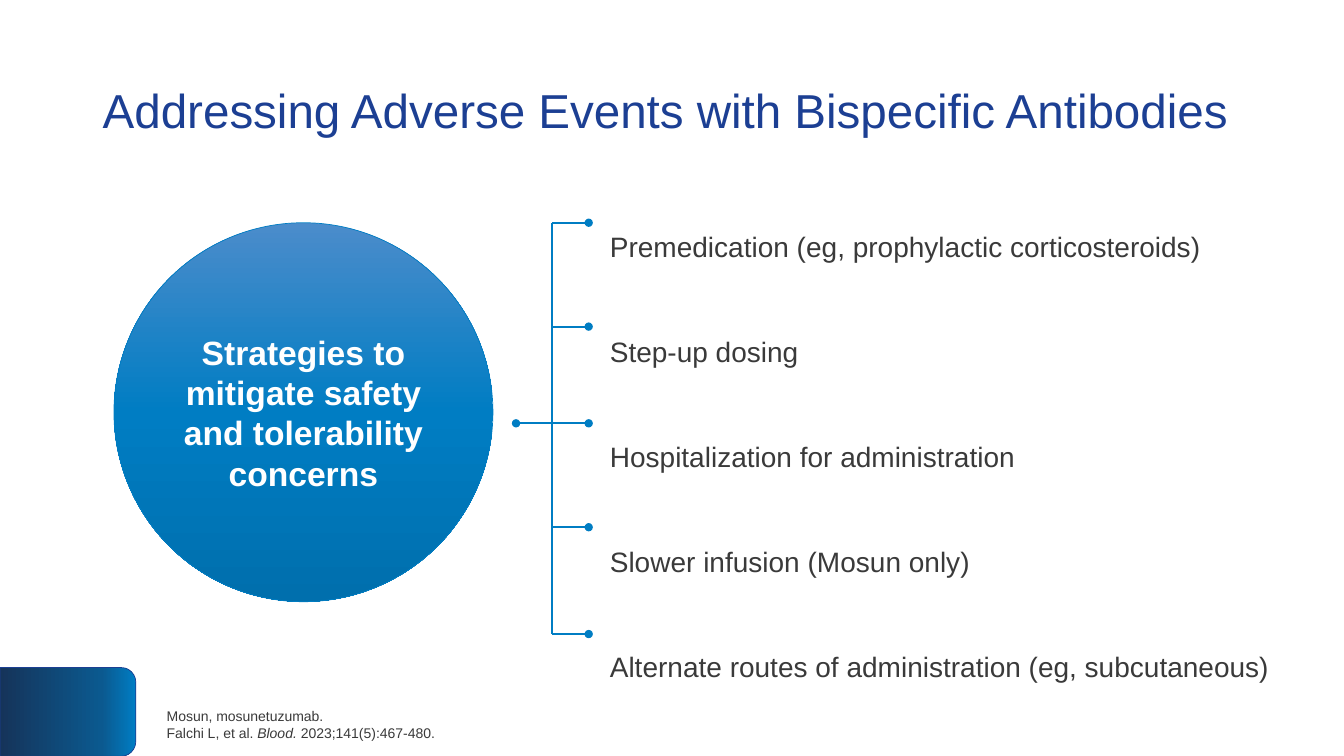
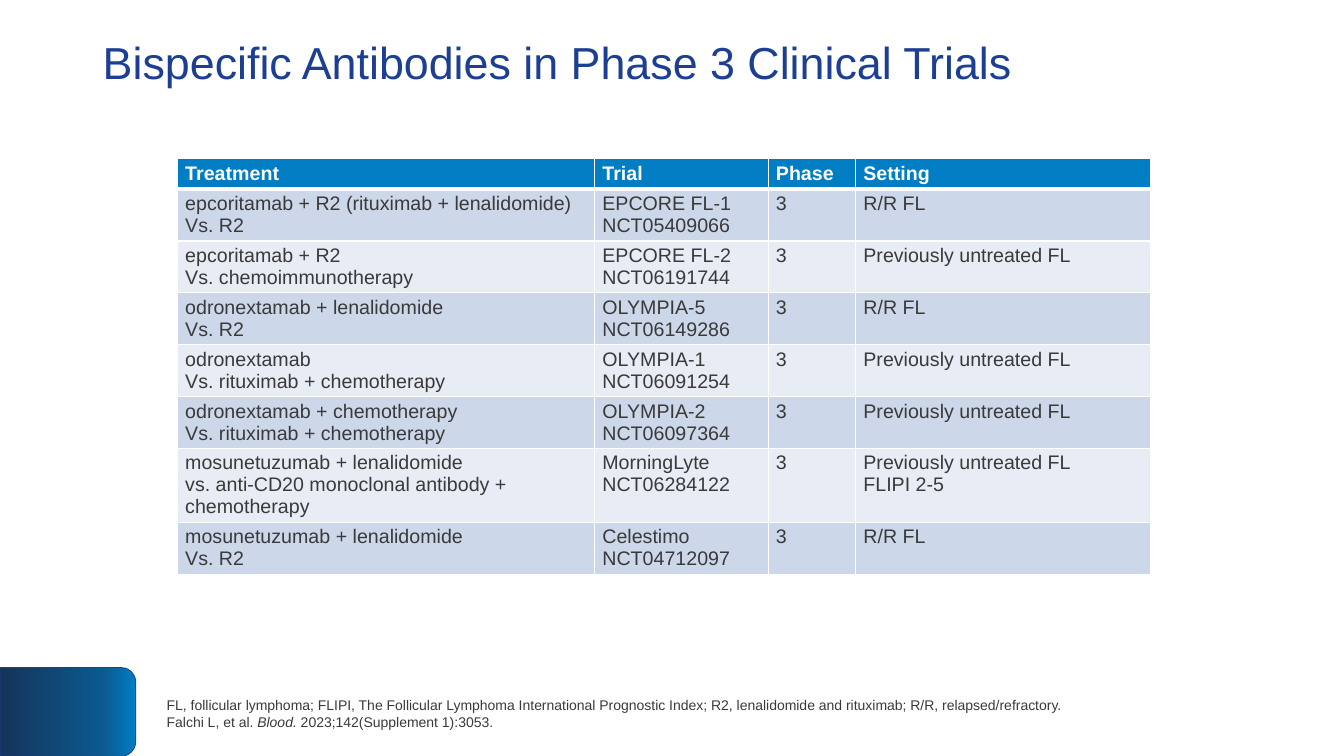
from lxml.etree import SubElement
from pptx import Presentation
from pptx.dml.color import RGBColor
from pptx.enum.shapes import MSO_CONNECTOR, MSO_SHAPE
from pptx.enum.text import MSO_ANCHOR, MSO_AUTO_SIZE, PP_ALIGN
from pptx.oxml.ns import qn
from pptx.util import Pt

LEFT, CENTER = PP_ALIGN.LEFT, PP_ALIGN.CENTER
TOP, MIDDLE = MSO_ANCHOR.TOP, MSO_ANCHOR.MIDDLE
FIXED = MSO_AUTO_SIZE.NONE
OVAL, TAB = MSO_SHAPE.OVAL, MSO_SHAPE.ROUND_2_SAME_RECTANGLE
STRAIGHT = MSO_CONNECTOR.STRAIGHT
LIST_PAGE, TITLE_PAGE = 1, 5

FONT = "Arial"
NAVY, BLUE, INK, WHITE = "1C3F93", "007DC3", "3A3A3A", "FFFFFF"
BANDS = "E7ECF5", "CCD7E9"
BAND_STOPS = (0, BLUE), (25, "0B598F"), (100, "15345A")
DISC_STOPS = (0, "4B8CCB"), (50, BLUE), (100, "006FAD")


def color(code):
    return RGBColor.from_string(code)


class Deck:
    """Holds the shared style and the current slide."""

    def __init__(self):
        self.prs = Presentation()
        self.prs.slide_width, self.prs.slide_height = Pt(960), Pt(540)
        self.slide = None

    # Slide with its title; the corner band goes to the master once
    def page(self, layout, title, top, height, size):
        first = self.slide is None
        self.slide = self.prs.slides.add_slide(self.prs.slide_layouts[layout])
        if first:
            band = self.shape(TAB, 16.8, 460, 63.4, 97, BAND_STOPS, NAVY)
            band.rotation = 90
            self.prs.slide_master.shapes._spTree.append(band._element)
        head = self.slide.shapes.title
        self.place(head, 66.2, top, 828, height)
        self.text(head.text_frame, [title], size, NAVY, MIDDLE, space=0.9)

    def place(self, item, left, top, width, height):
        item.left, item.top = Pt(left), Pt(top)
        item.width, item.height = Pt(width), Pt(height)

    def style(self, para, size, ink, bold=False):
        font = para.font
        font.name, font.size, font.bold = FONT, Pt(size), bold
        font.color.rgb = color(ink)

    # Text lines; parts between asterisks are italic
    def text(self, frame, lines, size, ink, anchor=TOP, align=LEFT,
             bold=False, space=1.0, after=0, plain=False):
        frame.word_wrap, frame.auto_size = True, FIXED
        frame.vertical_anchor = anchor
        for i, line in enumerate(lines):
            para = frame.add_paragraph() if i else frame.paragraphs[0]
            for j, part in enumerate(line.split("*")):
                run = para.add_run()
                run.text = part
                if j % 2:
                    run.font.italic = True
            para.alignment, para.line_spacing = align, space
            para.space_before, para.space_after = Pt(0), Pt(after)
            if plain:
                props = para._p.get_or_add_pPr()
                props.set("marL", "0")
                props.set("indent", "0")
                SubElement(props, qn("a:buNone"))
            self.style(para, size, ink, bold)

    # Preset shape with a vertical gradient
    def shape(self, kind, left, top, width, height, stops, edge):
        item = self.slide.shapes.add_shape(
            kind, Pt(left), Pt(top), Pt(width), Pt(height))
        item.shadow.inherit = False
        item.fill.gradient()
        item.fill.gradient_angle = 270
        ramp = item._element.spPr.find(".//" + qn("a:gsLst"))
        for old in list(ramp):
            ramp.remove(old)
        for pos, code in stops:
            stop = SubElement(ramp, qn("a:gs"), pos=str(pos * 1000))
            SubElement(stop, qn("a:srgbClr"), val=code)
        item.line.color.rgb, item.line.width = color(edge), Pt(0.5)
        return item

    # Straight line with optional dots at its ends
    def line(self, x1, y1, x2, y2, *dots):
        item = self.slide.shapes.add_connector(
            STRAIGHT, Pt(x1), Pt(y1), Pt(x2), Pt(y2))
        item.line.color.rgb, item.line.width = color(BLUE), Pt(1.5)
        for end in dots:
            SubElement(item.line._get_or_add_ln(), qn("a:" + end), type="oval")
        SubElement(item._element.spPr, qn("a:effectLst"))

    # List in the body placeholder
    def items(self, left, top, width, height, lines):
        body = self.slide.placeholders[1]
        self.place(body, left, top, width, height)
        self.text(body.text_frame, lines, 20, INK, space=3.0, after=3,
                  plain=True)

    # Footnote beside the corner band
    def note(self, top, width, lines):
        box = self.slide.shapes.add_textbox(
            Pt(112), Pt(top), Pt(width), Pt(31))
        self.text(box.text_frame, lines, 10, INK, MIDDLE)

    def cell(self, cell, words, fill, ink, bold, rules):
        cell.margin_left = cell.margin_right = Pt(5.4)
        cell.margin_top = cell.margin_bottom = Pt(2.7)
        props = cell._tc.get_or_add_tcPr()
        for side, width in zip("LRTB", rules):
            edge = SubElement(props, qn("a:ln" + side), w=str(Pt(width)))
            paint = SubElement(edge, qn("a:solidFill"))
            SubElement(paint, qn("a:srgbClr"), val=WHITE)
        cell.fill.solid()
        cell.fill.fore_color.rgb = color(fill)
        cell.text_frame.text = words
        for para in cell.text_frame.paragraphs:
            self.style(para, 14, ink, bold)

    # Banded table with a thick rule under its header
    def table(self, left, top, widths, heights, rows):
        grid = self.slide.shapes.add_table(
            len(rows), len(widths), Pt(left), Pt(top),
            Pt(sum(widths)), Pt(sum(heights))).table
        for col, width in zip(grid.columns, widths):
            col.width = Pt(width)
        for r, row in enumerate(rows):
            grid.rows[r].height = Pt(heights[r])
            fill, ink = (BANDS[r % 2], INK) if r else (BLUE, WHITE)
            rules = 1, 1, 3 if r == 1 else 1, 1 if r else 3
            for c, words in enumerate(row):
                self.cell(grid.cell(r, c), words, fill, ink, r == 0, rules)


def main():
    deck = Deck()

    # Strategies: disc, bracket and list
    deck.page(LIST_PAGE, "Addressing Adverse Events with Bispecific Antibodies",
              28.8, 104.4, 34)
    disc = deck.shape(OVAL, 81.4, 159.1, 270.7, 270.7, DISC_STOPS, BLUE)
    deck.text(disc.text_frame,
              ["Strategies to mitigate safety and tolerability concerns"],
              24, WHITE, MIDDLE, CENTER, bold=True)
    deck.items(428.4, 112.5, 499.7, 357, [
        "Premedication (eg, prophylactic corticosteroids)",
        "Step-up dosing",
        "Hospitalization for administration",
        "Slower infusion (Mosun only)",
        "Alternate routes of administration (eg, subcutaneous)"])
    stem, tip, mid = 394.5, 420.5, 302.4
    levels = 159.1, 233.3, 376.6, 452.9
    deck.line(368.6, mid, tip, mid, "headEnd", "tailEnd")
    deck.line(stem, levels[0], stem, levels[-1])
    for y in levels:
        deck.line(stem, y, tip, y, "tailEnd")
    deck.note(502.2, 282, ["Mosun, mosunetuzumab.",
                           "Falchi L, et al. *Blood. *2023;141(5):467-480."])

    # Trials: table
    deck.page(TITLE_PAGE, "Bispecific Antibodies in Phase 3 Clinical Trials",
              15.8, 61.2, 32)
    again, fresh = "R/R FL", "Previously untreated FL"
    trials = [
        ("epcoritamab + R2 (rituximab + lenalidomide)\nVs. R2",
         "EPCORE FL-1 NCT05409066", again),
        ("epcoritamab + R2\nVs. chemoimmunotherapy",
         "EPCORE FL-2\nNCT06191744", fresh),
        ("odronextamab + lenalidomide\nVs. R2",
         "OLYMPIA-5 NCT06149286", again),
        ("odronextamab\nVs. rituximab + chemotherapy",
         "OLYMPIA-1 NCT06091254", fresh),
        ("odronextamab + chemotherapy\nVs. rituximab + chemotherapy",
         "OLYMPIA-2 NCT06097364", fresh),
        ("mosunetuzumab + lenalidomide\n"
         "vs. anti-CD20 monoclonal antibody + chemotherapy",
         "MorningLyte\nNCT06284122", fresh + "\nFLIPI 2-5"),
        ("mosunetuzumab + lenalidomide\nVs. R2",
         "Celestimo\nNCT04712097", again)]
    rows = [("Treatment", "Trial", "Phase", "Setting")]
    rows += [(drug, trial, "3", group) for drug, trial, group in trials]
    deck.table(126.9, 113.2, (298, 124, 62.5, 210.3),
               [22] + [37] * 5 + [53, 37], rows)
    deck.note(494.3, 839, [
        "FL, follicular lymphoma; FLIPI, The Follicular Lymphoma International "
        "Prognostic Index; R2, lenalidomide and rituximab; "
        "R/R, relapsed/refractory.",
        "Falchi L, et al. *Blood.* 2023;142(Supplement 1):3053."])

    deck.prs.save("out.pptx")


if __name__ == "__main__":
    main()
